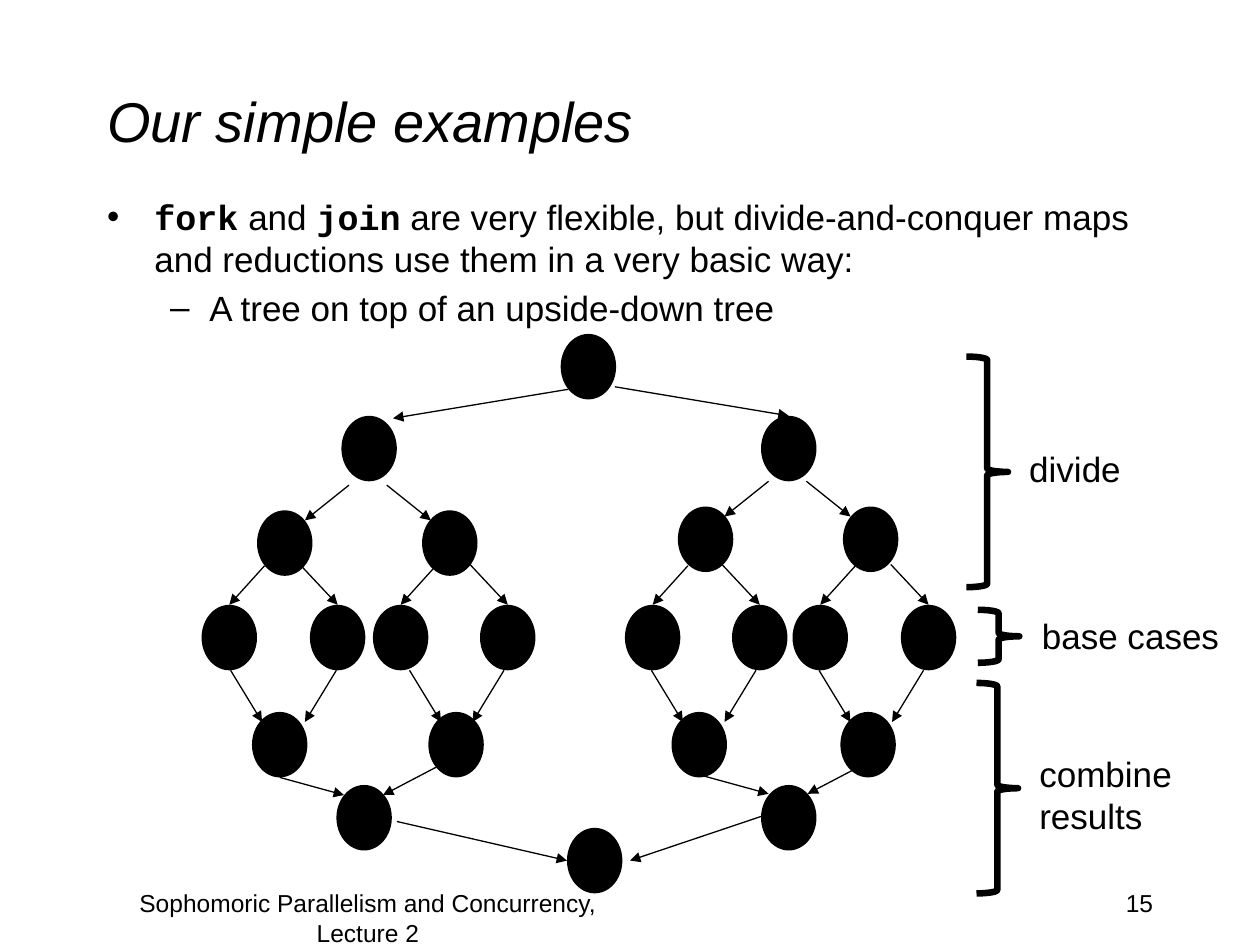
from lxml import etree
from pptx import Presentation
from pptx.dml.color import RGBColor
from pptx.enum.shapes import MSO_CONNECTOR, MSO_SHAPE
from pptx.enum.text import MSO_ANCHOR, MSO_AUTO_SIZE, PP_ALIGN
from pptx.oxml.ns import qn
from pptx.util import Inches, Pt

STRAIGHT = MSO_CONNECTOR.STRAIGHT
OVAL, BRACE = MSO_SHAPE.OVAL, MSO_SHAPE.LEFT_BRACE
LEFT, CENTER, RIGHT = PP_ALIGN.LEFT, PP_ALIGN.CENTER, PP_ALIGN.RIGHT
TOP, MIDDLE = MSO_ANCHOR.TOP, MSO_ANCHOR.MIDDLE
NO_FIT, GROW = MSO_AUTO_SIZE.NONE, MSO_AUTO_SIZE.SHAPE_TO_FIT_TEXT


def rgb(value):
    return RGBColor.from_string(value)


def add_run(p, text, size=20, font="Arial", color="000000", bold=False, italic=False):
    r = p.add_run()
    r.text = text
    r.font.size = Pt(size)
    r.font.name = font
    r.font.bold = bold
    r.font.italic = italic
    r.font.color.rgb = rgb(color)


class TreeSlide:
    ink = "000000"
    node_w, node_h = 0.44, 0.52

    def __init__(self, prs):
        self.s = prs.slides.add_slide(prs.slide_layouts[1])

    def place(self, sp, x, y, w, h):
        sp.left, sp.top, sp.width, sp.height = map(Inches, (x, y, w, h))

    def title(self, text, *box):
        sp = self.s.shapes.title
        self.place(sp, *box)
        tf = sp.text_frame
        tf.auto_size = NO_FIT
        tf.vertical_anchor = MIDDLE
        p = tf.paragraphs[0]
        p.alignment = LEFT
        add_run(p, text, size=32, italic=True)

    def body(self, items, *box):
        sp = self.s.placeholders[1]
        self.place(sp, *box)
        tf = sp.text_frame
        tf.auto_size = NO_FIT
        tf.vertical_anchor = TOP
        for i, (level, runs) in enumerate(items):
            p = tf.add_paragraph() if i else tf.paragraphs[0]
            p.level = level
            for text, fmt in runs:
                add_run(p, text, **fmt)

    def text(self, text, *box, align=LEFT, wrap=True, fit=NO_FIT, **fmt):
        tf = self.s.shapes.add_textbox(*map(Inches, box)).text_frame
        tf.word_wrap = wrap
        tf.auto_size = fit
        p = tf.paragraphs[0]
        p.alignment = align
        add_run(p, text, **fmt)

    def node(self, x, y):
        sp = self.s.shapes.add_shape(OVAL, *map(Inches, (x, y, self.node_w, self.node_h)))
        sp.shadow.inherit = False
        sp.fill.solid()
        sp.fill.fore_color.rgb = rgb(self.ink)
        sp.line.fill.background()

    def arrow(self, x1, y1, x2, y2):
        c = self.s.shapes.add_connector(STRAIGHT, *map(Inches, (x1, y1, x2, y2)))
        c.line.color.rgb = rgb(self.ink)
        c.line.width = Pt(0.75)
        etree.SubElement(c.line._get_or_add_ln(), qn("a:tailEnd"), type="triangle")
        etree.SubElement(c._element.spPr, qn("a:effectLst"))

    def brace(self, x, y, h):
        sp = self.s.shapes.add_shape(BRACE, *map(Inches, (x, y, 0.33, h)))
        sp.rotation = 180
        sp.shadow.inherit = False
        sp.fill.background()
        sp.line.color.rgb = rgb(self.ink)
        sp.line.width = Pt(3.75)


def main():
    prs = Presentation()
    prs.slide_width, prs.slide_height = Inches(10), Inches(7.5)
    slide = TreeSlide(prs)

    code = {"font": "Courier New", "bold": True}
    slide.title("Our simple examples", 0.75, 0.33, 8.5, 1.25)
    slide.body([
        (0, [("fork", code), (" and ", {}), ("join", code),
             (" are very flexible, but divide-and-conquer maps and reductions "
              "use them in a very basic way:", {})]),
        (1, [("A tree on top of an upside-down tree", {})]),
    ], 0.75, 1.5, 8.5, 1.17)
    slide.text("15", 7.17, 7, 2.08, 0.5, align=RIGHT, size=14)
    slide.text("Sophomoric Parallelism and Concurrency, Lecture 2",
               0.67, 7, 4.5, 0.5, align=CENTER, size=14)

    leaf_y = 4.8
    leaf_pairs = [(1.6, 2.46), (2.96, 3.81), (4.96, 5.81), (6.29, 7.15)]
    join_pairs = [(1.83, 2.67), (3.25, 4), (5.17, 6), (6.5, 7.33)]
    inner_nodes = [
        (4.45, 2.65), (2.71, 3.3), (6.04, 3.3),
        (2.04, 4.05), (3.35, 4.05), (5.38, 4.02), (6.69, 4.02),
        (2, 5.65), (3.4, 5.65), (5.33, 5.65), (6.67, 5.65),
        (2.67, 6.23), (6.04, 6.23), (4.5, 6.57),
    ]
    for x, y in inner_nodes:
        slide.node(x, y)

    for left, right in leaf_pairs:
        for x, shift, y in ((left, 0.28, 4.49), (right, -0.3, 4.48)):
            slide.node(x, leaf_y)
            center = x + slide.node_w / 2
            slide.arrow(center + shift, y, center, leaf_y)

    for left, right in join_pairs:
        for x, shift in ((left, 0.25), (right, -0.25)):
            slide.arrow(x, leaf_y + slide.node_h, x + shift, 5.73)

    slide.arrow(4.51, 3.09, 3.12, 3.32)
    slide.arrow(4.88, 3.07, 6.26, 3.3)
    for x, y in ((2.92, 3.85), (6.25, 3.82)):
        for side in (-1, 1):
            slide.arrow(x + side * 0.15, y, x + side * 0.5, y + 0.28)
    for x, y in ((2.22, 6.17), (5.59, 6.16)):
        slide.arrow(x, y, x + 0.51, y + 0.14)
        slide.arrow(x + 1.24, y - 0.08, x + 0.82, y + 0.14)
    slide.arrow(3.15, 6.52, 4.5, 6.83)
    slide.arrow(6.04, 6.48, 5, 6.83)

    phases = [
        ("divide", (7.67, 2.83, 1.83), (8.07, 3.5, 1.01, 0.44), False),
        ("base cases", (7.76, 4.84, 0.42), (8.17, 4.83, 1.62, 0.44), False),
        ("combine results", (7.75, 5.42, 1.67), (8.15, 5.92, 1.35, 0.77), True),
    ]
    for label, brace, box, wrap in phases:
        slide.brace(*brace)
        slide.text(label, *box, wrap=wrap, fit=GROW)

    prs.save("out.pptx")


if __name__ == "__main__":
    main()
